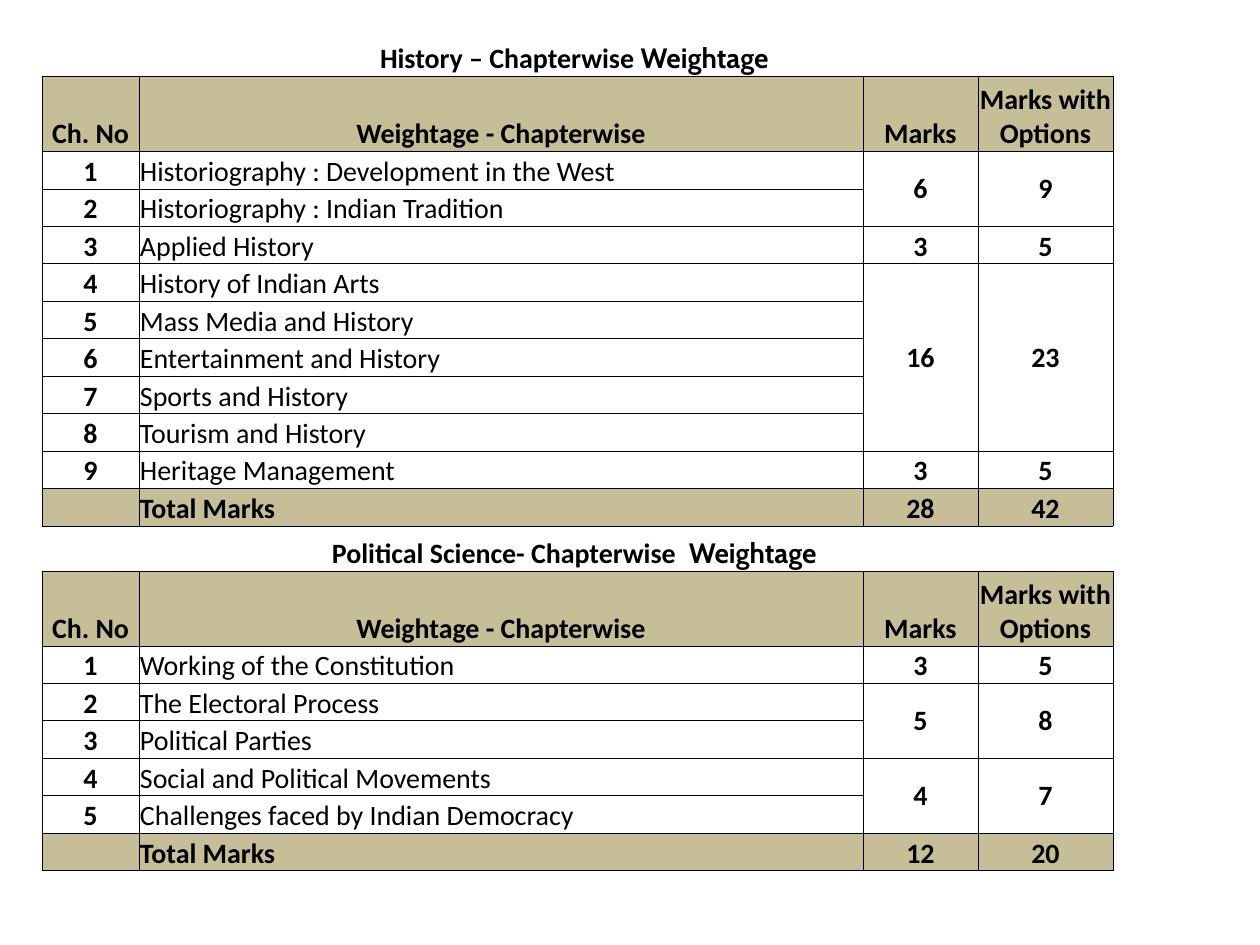
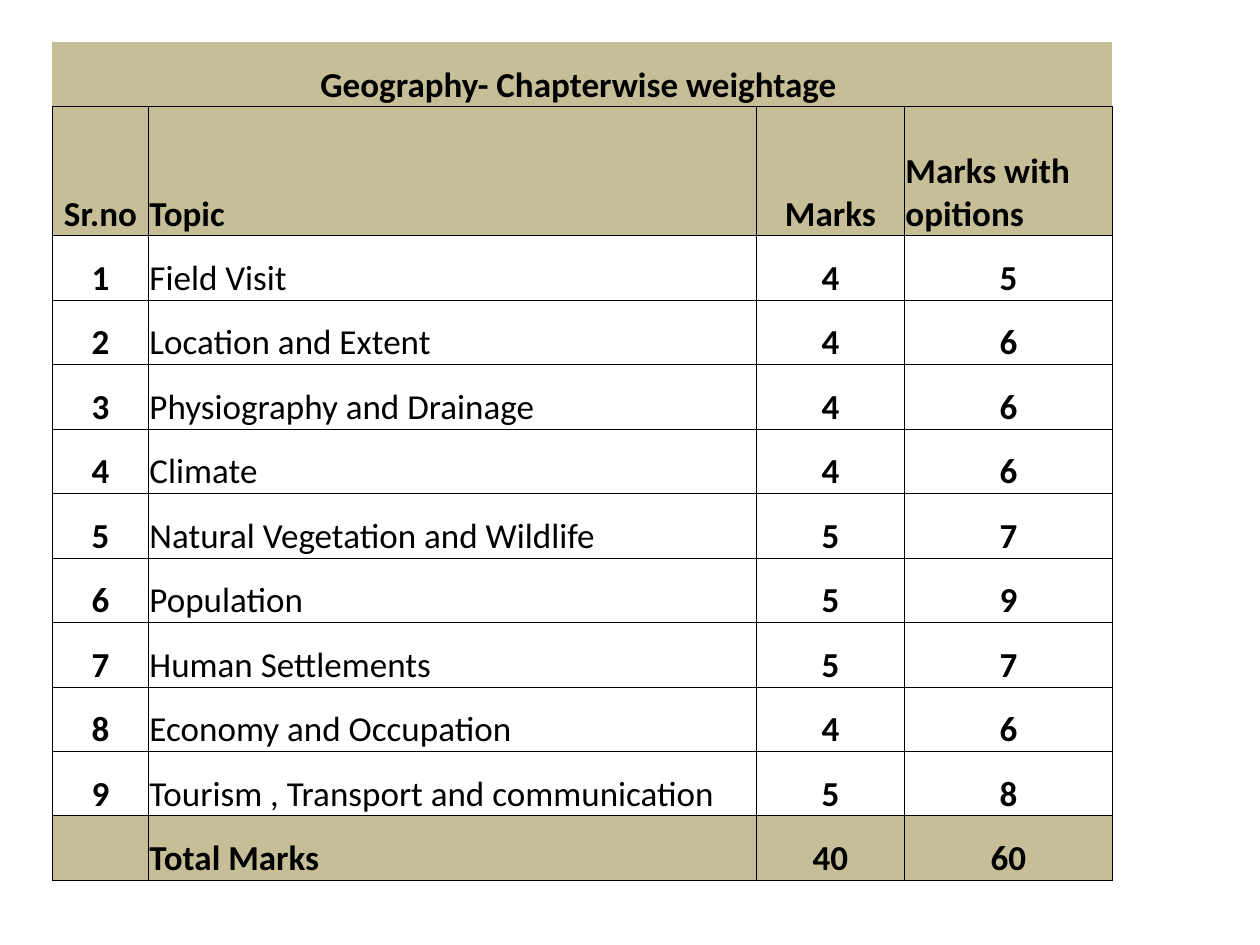
"""Builds two slides of chapterwise weightage tables."""
from collections import namedtuple

from lxml.etree import SubElement
from pptx import Presentation
from pptx.dml.color import RGBColor
from pptx.enum.text import MSO_ANCHOR as Anchor, PP_ALIGN as Align
from pptx.oxml.ns import qn
from pptx.util import Pt

PX_PER_INCH = 252
BLACK = RGBColor(0x00, 0x00, 0x00)
KHAKI = RGBColor(0xC5, 0xBE, 0x97)
BODY_FONT = "Calibri"
TITLE_FONT = "Cabin"
BORDER = Pt(0.5)
CELL_MARGIN = 2
ALIGN = {"l": Align.LEFT, "c": Align.CENTER}
BODY_ALIGN = "clcc"

Section = namedtuple("Section", "title header header_align chapters totals")
Sheet = namedtuple("Sheet", "left top columns title_height header_height row_height size title_fill sections")


def px(length):
    return round(length * 914400 / PX_PER_INCH)


def set_borders(cell, sides):
    props = cell._tc.get_or_add_tcPr()
    for side in "LRTB":
        line = SubElement(props, qn(f"a:ln{side}"), w=str(BORDER))
        if side in sides:
            fill = SubElement(line, qn("a:solidFill"))
            SubElement(fill, qn("a:srgbClr"), val=str(BLACK))
        else:
            SubElement(line, qn("a:noFill"))


CHAPTER_HEADER = ["Ch. No", "Weightage - Chapterwise", "Marks", "Marks with Options"]

history = Section(
    [("History – Chapterwise ", BODY_FONT), ("Weightage ", TITLE_FONT)],
    CHAPTER_HEADER, "cccc",
    [
        ("Historiography : Development in the West", 6, 9),
        ("Historiography : Indian Tradition", None, None),
        ("Applied History", 3, 5),
        ("History of Indian Arts", 16, 23),
        ("Mass Media and History", None, None),
        ("Entertainment and History", None, None),
        ("Sports and History", None, None),
        ("Tourism and History", None, None),
        ("Heritage Management", 3, 5),
    ],
    (28, 42),
)
politics = Section(
    [("Political Science- Chapterwise  ", BODY_FONT), ("Weightage ", TITLE_FONT)],
    CHAPTER_HEADER, "cccc",
    [
        ("Working of the Constitution", 3, 5),
        ("The Electoral Process", 5, 8),
        ("Political Parties", None, None),
        ("Social and Political Movements", 4, 7),
        ("Challenges faced by Indian Democracy", None, None),
    ],
    (12, 20),
)
geography = Section(
    [("Geography- Chapterwise weightage ", BODY_FONT)],
    ["Sr.no", "Topic", "Marks", "Marks with opitions"], "clcl",
    [
        ("Field Visit", 4, 5),
        ("Location and Extent", 4, 6),
        ("Physiography and Drainage", 4, 6),
        ("Climate", 4, 6),
        ("Natural Vegetation and Wildlife", 5, 7),
        ("Population", 5, 9),
        ("Human Settlements", 5, 7),
        ("Economy and Occupation", 4, 6),
        ("Tourism , Transport and communication", 5, 8),
    ],
    (40, 60),
)
sheets = [
    Sheet(84, 63, [194, 1448, 230, 270], 90, 150, 75, 16, False, [history, politics]),
    Sheet(105, 84, [192, 1216, 296, 416], 129, 258, 129, 20, True, [geography]),
]

deck = Presentation()
deck.slide_width, deck.slide_height = px(2520), px(1890)

for sheet in sheets:
    rows = []
    for section in sheet.sections:
        rows.append(("title", [section.title, None, None, None], "cccc"))
        rows.append(("header", section.header, section.header_align))
        for number, chapter in enumerate(section.chapters, 1):
            rows.append(("chapter", [number, *chapter], BODY_ALIGN))
        rows.append(("total", [None, "Total Marks", *section.totals], BODY_ALIGN))

    heights = {"title": sheet.title_height, "header": sheet.header_height}
    row_heights = [heights.get(kind, sheet.row_height) for kind, _, _ in rows]
    page = deck.slides.add_slide(deck.slide_layouts[6])
    table = page.shapes.add_table(
        len(rows), len(sheet.columns), px(sheet.left), px(sheet.top),
        px(sum(sheet.columns)), px(sum(row_heights))).table
    table.first_row = table.horz_banding = False
    for column, width in zip(table.columns, sheet.columns):
        column.width = px(width)
    for row, height in zip(table.rows, row_heights):
        row.height = px(height)

    for r, (kind, values, aligns) in enumerate(rows):
        if kind == "title":
            table.cell(r, 0).merge(table.cell(r, 3))
        for c, value in enumerate(values):
            cell = table.cell(r, c)
            cell.margin_left = cell.margin_right = cell.margin_top = px(CELL_MARGIN)
            cell.margin_bottom = 0
            cell.vertical_anchor = Anchor.BOTTOM

            if kind == "chapter" and value is not None:
                last = r
                while rows[last + 1][0] == "chapter" and rows[last + 1][1][c] is None:
                    last += 1
                if last > r:
                    cell.merge(table.cell(last, c))
                    cell.vertical_anchor = Anchor.MIDDLE

            if kind != "title":
                set_borders(cell, "LRTB")
            else:
                set_borders(cell, "TB" if r else "B")
            if kind in ("header", "total") or (kind == "title" and sheet.title_fill):
                cell.fill.solid()
                cell.fill.fore_color.rgb = KHAKI
            else:
                cell.fill.background()

            para = cell.text_frame.paragraphs[0]
            para.alignment = ALIGN[aligns[c]]
            if value is None:
                SubElement(para._p, qn("a:endParaRPr"), sz=str(sheet.size * 100))
                continue
            runs = value if kind == "title" else [(str(value), BODY_FONT)]
            for text, font in runs:
                span = para.add_run()
                span.text = text
                span.font.name = font
                span.font.size = Pt(sheet.size)
                span.font.bold = not (kind == "chapter" and c == 1)
                span.font.color.rgb = BLACK

deck.save("out.pptx")
